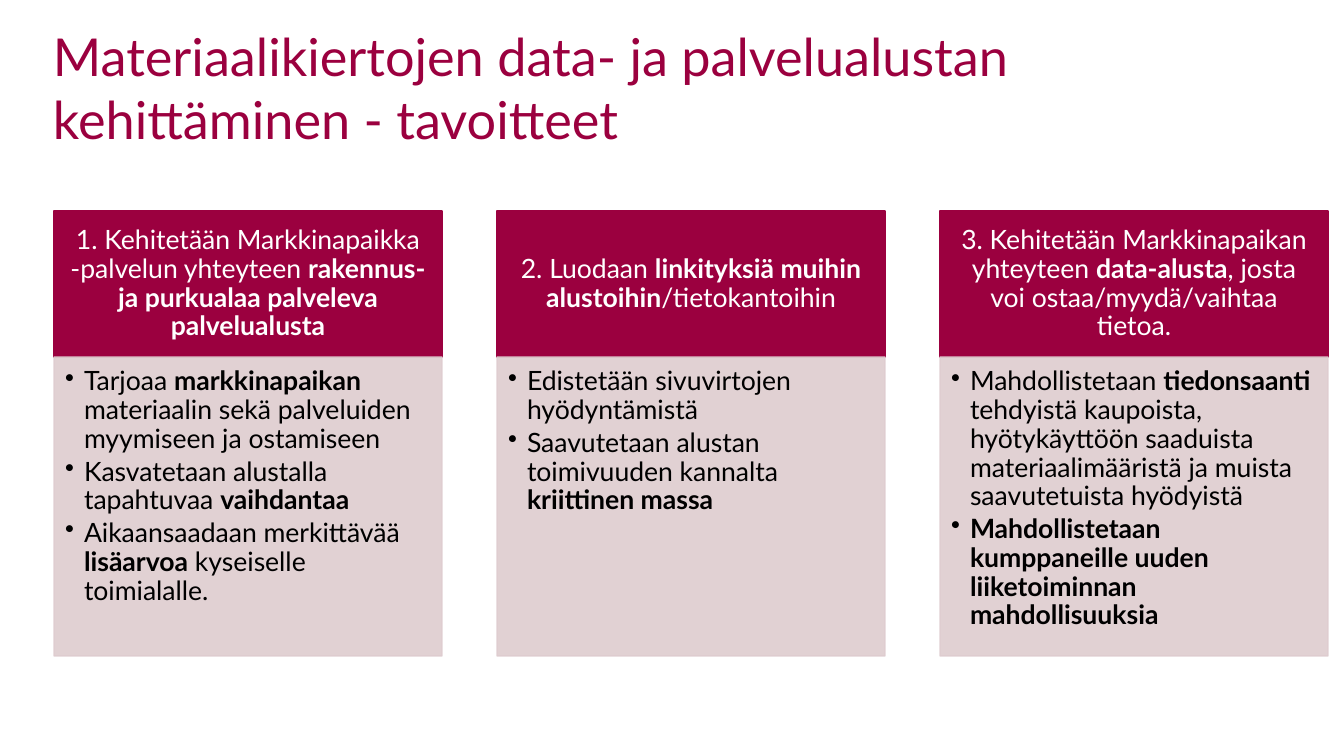
from lxml.etree import SubElement
from pptx import Presentation
from pptx.dml.color import RGBColor
from pptx.enum.shapes import MSO_SHAPE
from pptx.enum.text import MSO_ANCHOR, PP_ALIGN
from pptx.oxml.ns import qn
from pptx.util import Pt

SCALE = 914400 / 100.8
FONT = "Lato"
WINE = RGBColor(0x9B, 0x00, 0x3F)
ROSE = RGBColor(0xDE, 0xCC, 0xCF)
WHITE = RGBColor(0xFF, 0xFF, 0xFF)
BLACK = RGBColor(0x00, 0x00, 0x00)

TITLE = "Materiaalikiertojen data- ja palvelualustan kehittäminen - tavoitteet"
GOALS = [
    ("1. Kehitetään Markkinapaikka -palvelun yhteyteen "
     "**rakennus- ja purkualaa palveleva palvelualusta**",
     ["Tarjoaa **markkinapaikan** materiaalin sekä palveluiden myymiseen ja ostamiseen",
      "Kasvatetaan alustalla tapahtuvaa **vaihdantaa**",
      "Aikaansaadaan merkittävää **lisäarvoa** kyseiselle toimialalle."]),
    ("2. Luodaan **linkityksiä muihin alustoihin**/tietokantoihin",
     ["Edistetään sivuvirtojen hyödyntämistä",
      "Saavutetaan alustan toimivuuden kannalta **kriittinen massa**"]),
    ("3. Kehitetään Markkinapaikan yhteyteen **data-alusta**, "
     "josta voi ostaa/myydä/vaihtaa tietoa.",
     ["Mahdollistetaan **tiedonsaanti** tehdyistä kaupoista, hyötykäyttöön saaduista "
      "materiaalimääristä ja muista saavutetuista hyödyistä",
      "**Mahdollistetaan kumppaneille uuden liiketoiminnan mahdollisuuksia**"]),
]


def px(num):
    return round(num * SCALE)


def set_frame(frame, pads, anchor):
    frame.word_wrap = True
    frame.vertical_anchor = anchor
    (frame.margin_left, frame.margin_top,
     frame.margin_right, frame.margin_bottom) = map(px, pads)


def write(para, text, size, color):
    for i, part in enumerate(text.split("**")):
        if part:
            run = para.add_run()
            run.text = part
            run.font.name = FONT
            run.font.size = Pt(size)
            run.font.bold = i % 2 == 1
            run.font.color.rgb = color


def add_bullet(para):
    props = para._p.get_or_add_pPr()
    props.set("marL", str(px(19)))
    props.set("indent", str(px(-19)))
    SubElement(props, qn("a:buChar"), char="•")


def add_title(slide):
    box = slide.shapes.add_textbox(px(53), px(24), px(1123), px(126))
    set_frame(box.text_frame, (0, 0, 0, 0), MSO_ANCHOR.BOTTOM)
    write(box.text_frame.paragraphs[0], TITLE, 37.3, WINE)


def add_panel(slide, left, top, high, color):
    panel = slide.shapes.add_shape(
        MSO_SHAPE.RECTANGLE, px(left), px(top), px(388), px(high))
    panel.shadow.inherit = False
    panel.fill.solid()
    panel.fill.fore_color.rgb = color
    panel.line.color.rgb = color
    panel.line.width = Pt(1)
    return panel


def add_head(slide, left, text):
    frame = add_panel(slide, left, 211, 146, WINE).text_frame
    set_frame(frame, (15, 8, 15, 8), MSO_ANCHOR.MIDDLE)
    para = frame.paragraphs[0]
    para.alignment = PP_ALIGN.CENTER
    para.line_spacing = 0.9
    write(para, text, 19, WHITE)


def add_body(slide, left, points):
    panel = add_panel(slide, left, 357, 299, ROSE)
    for tone in panel._element.spPr.iter(qn("a:srgbClr")):
        SubElement(tone, qn("a:alpha"), val="90000")
    frame = panel.text_frame
    set_frame(frame, (11, 11, 15, 17), MSO_ANCHOR.TOP)
    for i, point in enumerate(points):
        para = frame.add_paragraph() if i else frame.paragraphs[0]
        add_bullet(para)
        para.alignment = PP_ALIGN.LEFT
        para.line_spacing = 0.9
        para.space_after = Pt(2.85)
        write(para, point, 19, BLACK)


def main():
    deck = Presentation()
    deck.slide_width, deck.slide_height = px(1344), px(756)
    slide = deck.slides.add_slide(deck.slide_layouts[6])
    add_title(slide)
    for i, (head, points) in enumerate(GOALS):
        left = 54 + 443 * i
        add_head(slide, left, head)
        add_body(slide, left, points)
    deck.save("out.pptx")


if __name__ == "__main__":
    main()
